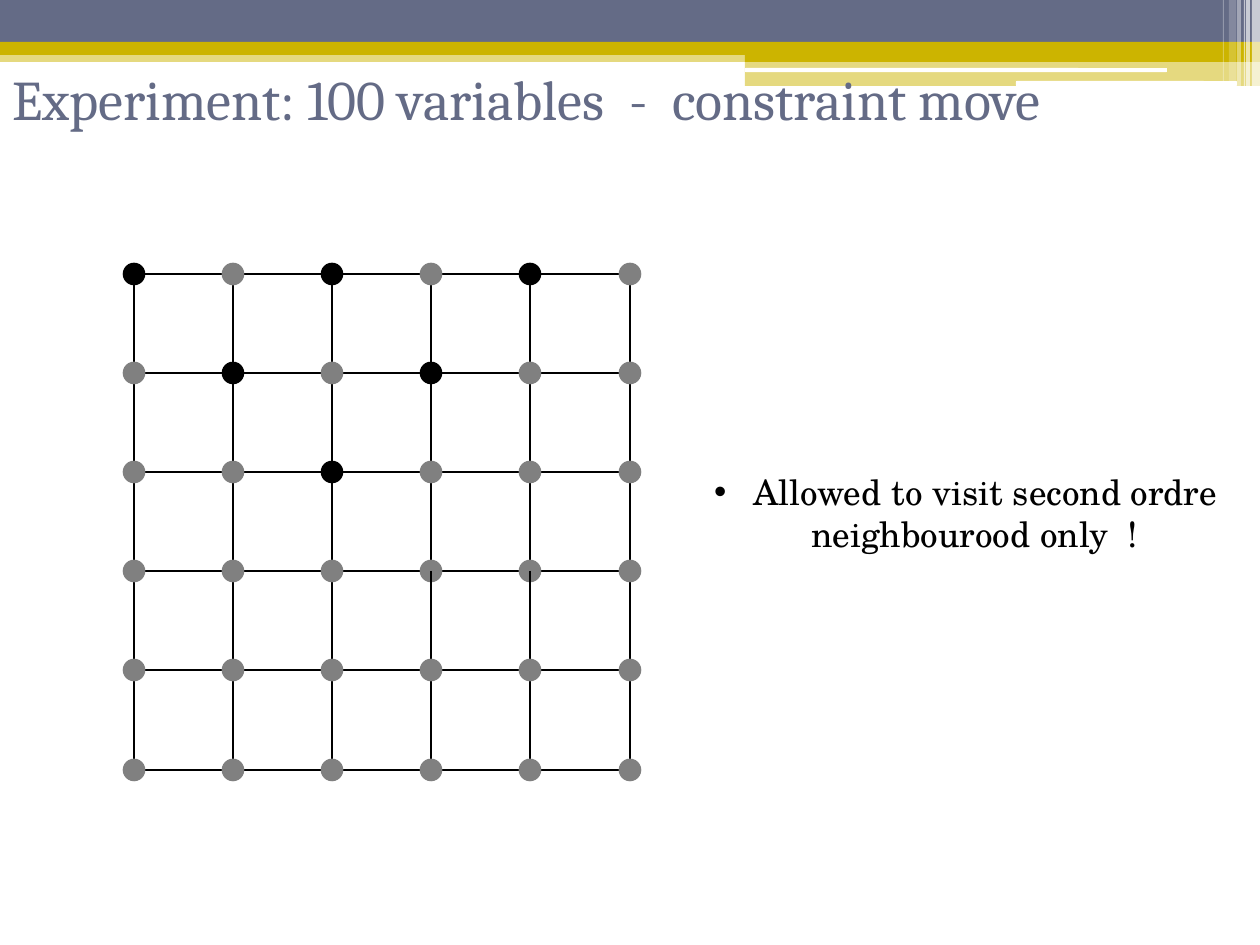
from lxml import etree
from pptx import Presentation
from pptx.dml.color import RGBColor
from pptx.enum.shapes import MSO_CONNECTOR, MSO_SHAPE
from pptx.enum.text import MSO_ANCHOR, PP_ALIGN
from pptx.oxml.ns import qn
from pptx.util import Pt

RECT = MSO_SHAPE.RECTANGLE
ROUNDED = MSO_SHAPE.ROUNDED_RECTANGLE
OVAL = MSO_SHAPE.OVAL
STRAIGHT = MSO_CONNECTOR.STRAIGHT
TOP = MSO_ANCHOR.TOP
LEFT = PP_ALIGN.LEFT
CENTER = PP_ALIGN.CENTER

PX = 914400 // 126
COLORS = {
    "slate": "646B86",
    "gold": "CCB400",
    "white": "FFFFFF",
    "black": "000000",
    "gray": "808080",
}


class Board:
    def __init__(self, slide):
        self.slide = slide
        self.title_font = "Cambria"
        self.body_font = "TeX Gyre Schola"

    def rgb(self, color):
        return RGBColor.from_string(COLORS[color])

    def shape(self, kind, box, color, opacity=100, outline=0):
        shape = self.slide.shapes.add_shape(kind, *(v * PX for v in box))
        shape.shadow.inherit = False
        shape.fill.solid()
        shape.fill.fore_color.rgb = self.rgb(color)
        if opacity < 100:
            tint = shape.fill._xPr.find(qn("a:solidFill"))[0]
            etree.SubElement(tint, qn("a:alpha"), val=str(opacity * 1000))
        if outline:
            shape.line.color.rgb = self.rgb(color)
            shape.line.width = Pt(outline)
        else:
            shape.line.fill.background()

    def node(self, x, y, color):
        self.shape(OVAL, (x - 10, y - 10, 20, 20), color, outline=1.5)

    def edge(self, start, end):
        ends = [v * PX for v in (*start, *end)]
        edge = self.slide.shapes.add_connector(STRAIGHT, *ends)
        edge.line.color.rgb = self.rgb("black")
        edge.line.width = Pt(1.25)
        etree.SubElement(edge._element.spPr, qn("a:effectLst"))

    def text(self, box, words, font, size, color, align=LEFT, bullet=None):
        frame = self.slide.shapes.add_textbox(*(v * PX for v in box)).text_frame
        frame.word_wrap = True
        frame.vertical_anchor = TOP
        paragraph = frame.paragraphs[0]
        paragraph.text = words
        paragraph.alignment = align
        style = paragraph.runs[0].font
        style.name = font
        style.size = Pt(size)
        style.color.rgb = self.rgb(color)
        if bullet:
            props = paragraph._p.get_or_add_pPr()
            etree.SubElement(props, qn("a:buFont"), typeface="Arial")
            etree.SubElement(props, qn("a:buChar"), char=bullet)


def draw_banner(board):
    bands = [
        (RECT, (0, 50, 1260, 12), "gold", 50),
        (RECT, (0, 0, 1260, 42), "slate", 100),
        (RECT, (0, 42, 1260, 13), "gold", 100),
        (RECT, (745, 49, 515, 13), "gold", 100),
        (RECT, (745, 62, 515, 24), "gold", 50),
        (ROUNDED, (745, 68, 422, 4), "white", 100),
        (ROUNDED, (1016, 81, 221, 5), "white", 100),
    ]
    for band in bands:
        board.shape(*band)
    stripes = [
        (1252, 8, 86, 65),
        (1246, 4, 86, 65),
        (1244, 1, 86, 60),
        (1237, 4, 86, 40),
        (1229, 7, 81, 20),
        (1223, 1, 81, 30),
    ]
    for x, width, height, opacity in stripes:
        board.shape(RECT, (x, 0, width, height), "white", opacity)


def draw_lattice(board):
    size = 6
    left, top, side = 134, 274, 496
    visited = {(0, 0), (2, 0), (4, 0), (1, 1), (3, 1), (2, 2)}
    crossed = [(3, 3), (4, 3)]
    spans = [(0, 2), (2, 3), (3, 5)]

    def point(column, row):
        return left + side * column // 5, top + side * row // 5

    def draw_node(cell):
        board.node(*point(*cell), "black" if cell in visited else "gray")

    for line in range(size):
        for first, last in spans:
            board.edge(point(first, line), point(last, line))
            if (line, first) not in crossed:
                board.edge(point(line, first), point(line, last))
    for cell in crossed:
        draw_node(cell)
    for column, row in crossed:
        board.edge(point(column, row), point(column, 5))
    for row in range(size):
        for column in range(size):
            if (column, row) not in crossed:
                draw_node((column, row))


def main():
    deck = Presentation()
    deck.slide_width = 1260 * PX
    deck.slide_height = 945 * PX
    board = Board(deck.slides.add_slide(deck.slide_layouts[6]))
    draw_banner(board)
    board.text((0, 58, 1176, 147), "Experiment: 100 variables  -  constraint move",
               board.title_font, 32, "slate")
    draw_lattice(board)
    board.text((699, 464, 551, 97),
               " Allowed to visit second ordre neighbourood only  !",
               board.body_font, 20, "black", CENTER, "•")
    deck.save("out.pptx")


if __name__ == "__main__":
    main()
